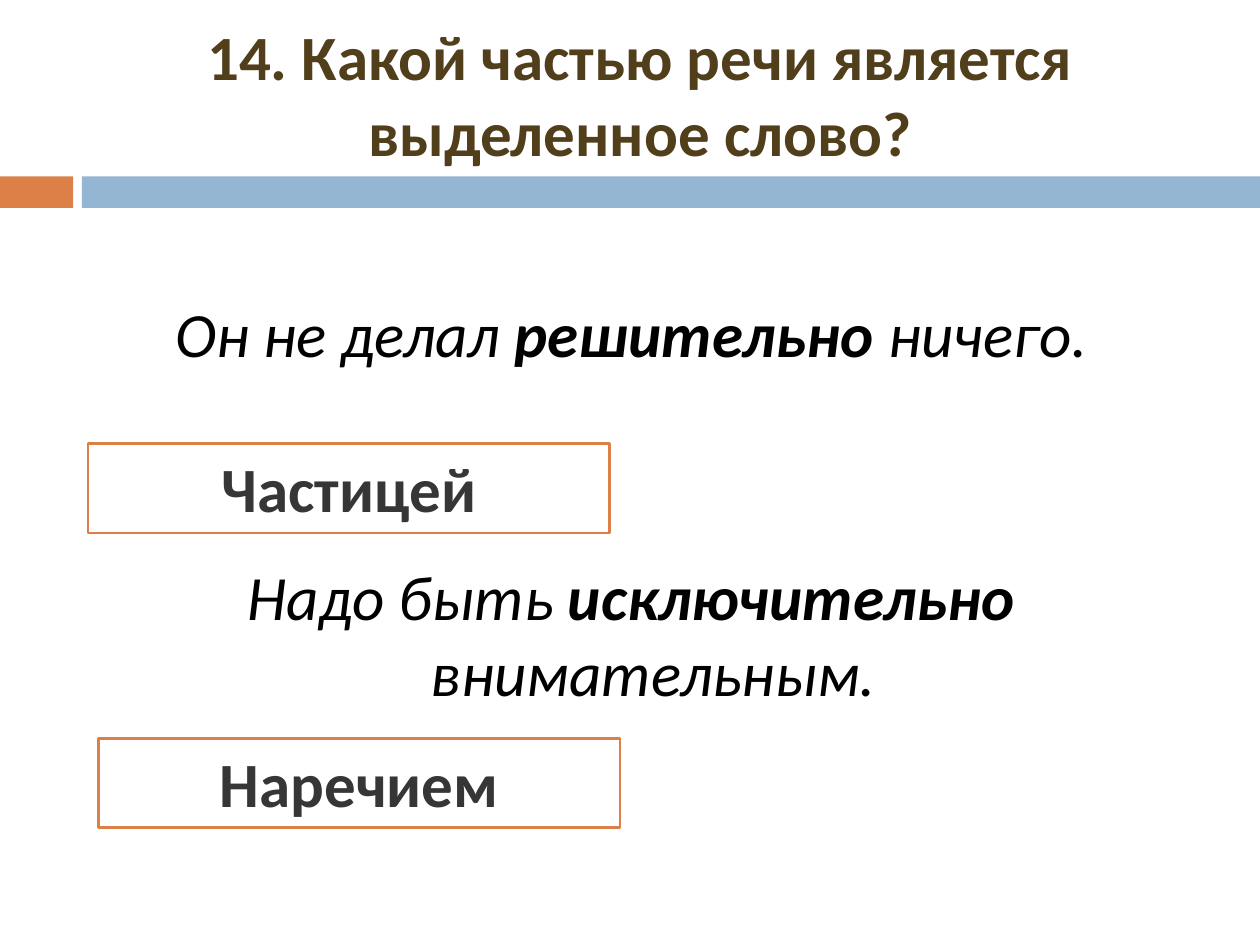
import pptx
import pptx.util
import pptx.dml.color
import pptx.enum.shapes
import pptx.enum.text
import lxml.etree

RGB = pptx.dml.color.RGBColor
Inches, Pt = pptx.util.Inches, pptx.util.Pt
ALIGN = pptx.enum.text.PP_ALIGN
ANCHOR = pptx.enum.text.MSO_ANCHOR
RECT = pptx.enum.shapes.MSO_SHAPE.RECTANGLE

ORANGE = RGB(0xDD, 0x80, 0x47)
BLUE = RGB(0x94, 0xB6, 0xD2)
BROWN = RGB(0x51, 0x3E, 0x1B)
GRAY = RGB(0x36, 0x36, 0x36)
BLACK = RGB(0, 0, 0)
WHITE = RGB(0xFF, 0xFF, 0xFF)

# Content
TITLE = "14. Какой частью речи является выделенное слово?"
LINES = [  # before, stressed word, after
    ("Он не делал ", "решительно ", "ничего."),
    ("Надо быть ", "исключительно ", "внимательным."),
]
ANSWERS = [("Частицей", 0.7, 3.52), ("Наречием", 0.78, 5.86)]  # text, left, top

# Layout in inches
WIDTH, HEIGHT = 10, 7.5
BAND_TOP, BAND_HIGH = 1.4, 0.25
TAB, SPLIT = 0.58, 0.65
BANDS = [(0, TAB, ORANGE), (SPLIT, WIDTH - SPLIT, BLUE)]
INDENT = 0.35
LINE_GAP = 107  # points between the sentences, room for an answer

FONT = {"name": "Calibri", "size": Pt(36)}


def set_all(item, values):
    for key, value in values.items():
        setattr(item, key, value)


def place(shape, *box):
    keys = ("left", "top", "width", "height")
    set_all(shape, dict(zip(keys, map(Inches, box))))


def add_run(par, text, color, **style):
    run = par.add_run()
    run.text = text
    set_all(run.font, {**FONT, **style})
    run.font.color.rgb = color


def add_rect(slide, box, fill):
    rect = slide.shapes.add_shape(RECT, *map(Inches, box))
    rect.shadow.inherit = False
    rect.fill.solid()
    rect.fill.fore_color.rgb = fill
    rect.line.fill.background()
    return rect


def main():
    deck = pptx.Presentation()
    set_all(deck, {"slide_width": Inches(WIDTH), "slide_height": Inches(HEIGHT)})
    slide = deck.slides.add_slide(deck.slide_layouts[1])
    title, body = slide.placeholders

    # Band under the title
    for left, wide, color in BANDS:
        add_rect(slide, (left, BAND_TOP, wide, BAND_HIGH), color)

    # Title
    place(title, 0.62, 0.2, 8.92, 1.08)
    frame = title.text_frame
    set_all(frame, {"auto_size": pptx.enum.text.MSO_AUTO_SIZE.NONE,
                    "vertical_anchor": ANCHOR.MIDDLE})
    frame.paragraphs[0].alignment = ALIGN.CENTER
    add_run(frame.paragraphs[0], TITLE, BROWN, bold=True)

    # Sentences
    place(body, 0.55, 1.64, 8.92, 4.92)
    frame = body.text_frame
    set_all(frame, {"auto_size": pptx.enum.text.MSO_AUTO_SIZE.NONE,
                    "margin_top": Inches(0.7)})
    for row, parts in enumerate(LINES):
        par = frame.add_paragraph() if row else frame.paragraphs[0]
        set_all(par, {"alignment": ALIGN.CENTER,
                      "space_before": Pt(LINE_GAP * row)})
        props = par._p.get_or_add_pPr()
        props.set("marL", str(Inches(INDENT)))
        props.set("indent", str(-Inches(INDENT)))
        lxml.etree.SubElement(props, pptx.oxml.ns.qn("a:buNone"))
        for spot, text in enumerate(parts):
            add_run(par, text, BLACK, italic=True, bold=spot == 1)

    # Answer boxes
    for text, left, top in ANSWERS:
        box = add_rect(slide, (left, top, 4.14, 0.71), WHITE)
        box.line.color.rgb = ORANGE
        box.line.width = Pt(1.5)
        set_all(box.text_frame, {"word_wrap": True,
                                 "vertical_anchor": ANCHOR.TOP})
        par = box.text_frame.paragraphs[0]
        par.alignment = ALIGN.CENTER
        add_run(par, text, GRAY, bold=True)

    deck.save("out.pptx")


if __name__ == "__main__":
    main()
